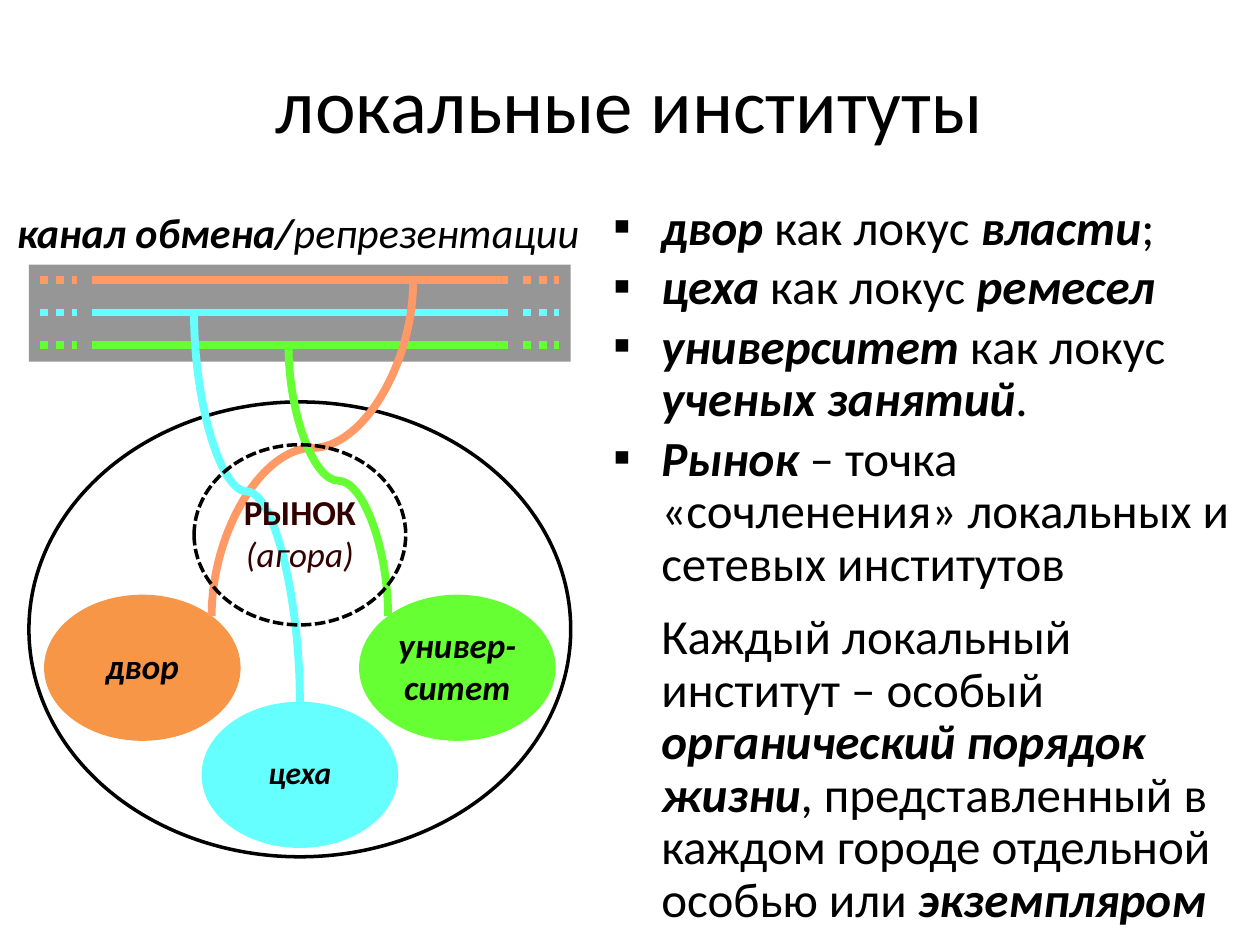
from dataclasses import dataclass
from typing import NamedTuple, Optional

from lxml.etree import SubElement
from pptx import Presentation
from pptx.dml.color import RGBColor
from pptx.enum.dml import MSO_LINE
from pptx.enum.shapes import MSO_CONNECTOR, MSO_SHAPE
from pptx.enum.text import MSO_ANCHOR, PP_ALIGN
from pptx.oxml.ns import qn
from pptx.util import Inches, Pt

BLACK, GREY, ORANGE, CYAN, GREEN = "000000", "969696", "FF9966", "66FFFF", "66FF33"


class Span(NamedTuple):
    text: str
    bold: bool = False
    italic: bool = False


class Box(NamedTuple):
    left: float
    top: float
    width: float
    height: float


class Point(NamedTuple):
    x: float
    y: float


@dataclass
class Institute:
    name: str
    box: Box
    color: str
    size: int


@dataclass
class Channel:
    color: str
    y: float
    source: Point
    tap_x: float
    bend: float = 0.5


def strong(text: str) -> Span:
    return Span(text, True, True)


def rgb(value: str) -> RGBColor:
    return RGBColor.from_string(value)


def apply(target, formats: dict) -> None:
    for key, value in formats.items():
        setattr(target, key, value)


def write_spans(paragraph, spans: list[Span], size: int, color: str) -> None:
    for span in spans:
        run = paragraph.add_run()
        run.text = span.text
        apply(run.font, {"name": "Calibri", "size": Pt(size),
                         "bold": span.bold, "italic": span.italic})
        run.font.color.rgb = rgb(color)


def write(frame, lines: list[list[Span]], size: int, color: str = BLACK,
          align=PP_ALIGN.CENTER, **formats) -> None:
    apply(frame, {"word_wrap": True, **formats})
    for index, spans in enumerate(lines):
        paragraph = frame.paragraphs[0] if index == 0 else frame.add_paragraph()
        paragraph.alignment = align
        write_spans(paragraph, spans, size, color)


def add_text(slide, box: Box):
    return slide.shapes.add_textbox(*map(Inches, box)).text_frame


def add_figure(slide, kind, box: Box, fill: Optional[str] = None, dash=None):
    figure = slide.shapes.add_shape(kind, *map(Inches, box))
    figure.shadow.inherit = False
    if fill:
        figure.fill.solid()
        figure.fill.fore_color.rgb = rgb(fill)
        figure.line.fill.background()
    else:
        figure.fill.background()
        figure.line.color.rgb = rgb(BLACK)
        apply(figure.line, {"width": Pt(2), "dash_style": dash})
    return figure


def label(figure, lines: list[list[Span]], size: int, color: str = BLACK) -> None:
    write(figure.text_frame, lines, size, color, vertical_anchor=MSO_ANCHOR.MIDDLE,
          margin_left=0, margin_right=0, margin_top=0, margin_bottom=Inches(0.04))


def add_line(slide, start: Point, end: Point, color: str, dash=None,
             kind=MSO_CONNECTOR.STRAIGHT):
    line = slide.shapes.add_connector(kind, *map(Inches, (*start, *end)))
    line.line.color.rgb = rgb(color)
    apply(line.line, {"width": Pt(4.5), "dash_style": dash})
    SubElement(line._element.spPr, qn("a:effectLst"))
    return line


def add_vertical_curve(slide, start: Point, end: Point, color: str, bend: float) -> None:
    middle = Point((start.x + end.x) / 2, (start.y + end.y) / 2)
    turned = [Point(middle.x - (p.y - middle.y), middle.y + (p.x - middle.x))
              for p in (start, end)]
    curve = add_line(slide, *turned, color, kind=MSO_CONNECTOR.CURVE)
    properties = curve._element.spPr
    properties.find(qn("a:xfrm")).set("rot", str(270 * 60000))
    geometry = properties.find(qn("a:prstGeom"))
    guides = geometry.find(qn("a:avLst"))
    if guides is None:
        guides = SubElement(geometry, qn("a:avLst"))
    SubElement(guides, qn("a:gd"), name="adj1", fmla=f"val {round(bend * 100000)}")


def set_indent(paragraph, bullet: Optional[str]) -> None:
    properties = paragraph._p.get_or_add_pPr()
    properties.set("marL", str(Inches(0.38)))
    properties.set("indent", str(Inches(-0.38) if bullet else 0))
    if bullet:
        SubElement(properties, qn("a:buFont"), typeface="Calibri")
        SubElement(properties, qn("a:buChar"), char=bullet)
    else:
        SubElement(properties, qn("a:buNone"))


THESES = [
    [strong("двор "), Span("как локус "), strong("власти"), Span(";")],
    [strong("цеха "), Span("как локус "), strong("ремесел")],
    [strong("университет "), Span("как локус "), strong("ученых занятий"), Span(".")],
    [strong("Рынок "), Span("– точка «сочленения» локальных и сетевых институтов")],
    [Span("Каждый локальный институт – особый "), strong("органический порядок жизни"),
     Span(", представленный в каждом городе отдельной особью или "),
     strong("экземпляром")],
]
INSTITUTES = [
    Institute("двор", Box(0.35, 4.72, 1.56, 1.16), "F79646", 20),
    Institute("универ-ситет", Box(2.85, 4.72, 1.56, 1.16), GREEN, 20),
    Institute("цеха", Box(1.6, 5.57, 1.56, 1.16), CYAN, 18),
]
CHANNELS = [
    Channel(ORANGE, 2.22, Point(1.68, 4.89), 3.28),
    Channel(CYAN, 2.48, Point(2.38, 5.57), 1.54, 0.54),
    Channel(GREEN, 2.74, Point(3.08, 4.89), 2.29),
]
SEGMENTS = [(0.73, 4.03, None), (4.15, 4.44, MSO_LINE.ROUND_DOT),
            (0.32, 0.61, MSO_LINE.ROUND_DOT)]


def add_theses(slide) -> None:
    frame = add_text(slide, Box(4.77, 1.56, 5.23, 5.94))
    write(frame, THESES, 28, align=PP_ALIGN.LEFT)
    for paragraph in frame.paragraphs:
        closing = paragraph.text == "".join(span.text for span in THESES[-1])
        apply(paragraph, {"line_spacing": Pt(30), "space_before": Pt(12 if closing else 4)})
        set_indent(paragraph, None if closing else "▪")


def add_city(slide) -> None:
    add_figure(slide, MSO_SHAPE.RECTANGLE, Box(0.23, 2.1, 4.3, 0.77), GREY)
    for institute in INSTITUTES:
        oval = add_figure(slide, MSO_SHAPE.OVAL, institute.box, institute.color)
        label(oval, [[strong(institute.name)]], institute.size)
    add_figure(slide, MSO_SHAPE.OVAL, Box(0.23, 3.19, 4.3, 3.61))
    for channel in CHANNELS:
        for left, right, dash in SEGMENTS:
            add_line(slide, Point(left, channel.y), Point(right, channel.y),
                     channel.color, dash)
    for channel in CHANNELS:
        add_vertical_curve(slide, channel.source, Point(channel.tap_x, channel.y),
                           channel.color, channel.bend)
    write(add_text(slide, Box(0.04, 1.59, 4.65, 0.5)),
          [[strong("канал обмена/"), Span("репрезентации", italic=True)]], 24,
          margin_left=0, margin_right=0)
    market = add_figure(slide, MSO_SHAPE.OVAL, Box(1.54, 3.53, 1.68, 1.43),
                        dash=MSO_LINE.SQUARE_DOT)
    label(market, [[Span("РЫНОК", bold=True)], [Span("(агора)", italic=True)]],
          20, "330000")


def main() -> None:
    deck = Presentation()
    apply(deck, {"slide_width": Inches(10), "slide_height": Inches(7.5)})
    slide = deck.slides.add_slide(deck.slide_layouts[6])
    write(add_text(slide, Box(0.5, 0.3, 9, 1.03)), [[Span("локальные институты")]], 44,
          vertical_anchor=MSO_ANCHOR.MIDDLE)
    add_theses(slide)
    add_city(slide)
    deck.save("out.pptx")


if __name__ == "__main__":
    main()
